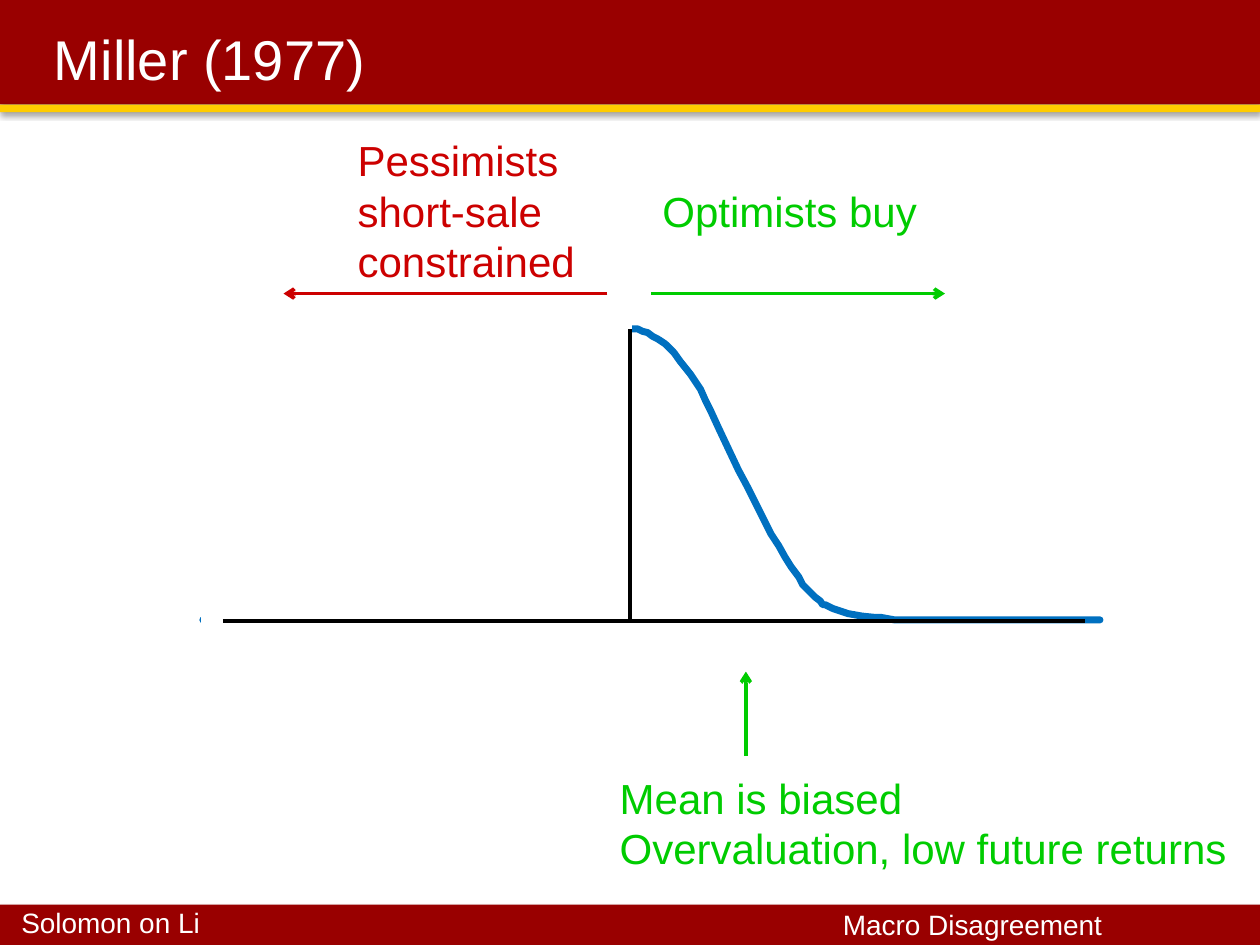
from dataclasses import dataclass

from lxml import etree
from pptx import Presentation
from pptx.dml.color import RGBColor
from pptx.enum.shapes import MSO_CONNECTOR, MSO_SHAPE
from pptx.enum.text import MSO_ANCHOR, MSO_AUTO_SIZE
from pptx.oxml.ns import qn
from pptx.util import Inches, Pt

RECTANGLE = MSO_SHAPE.RECTANGLE
STRAIGHT = MSO_CONNECTOR.STRAIGHT
TOP, MIDDLE = MSO_ANCHOR.TOP, MSO_ANCHOR.MIDDLE
FIT_SHAPE, FIXED = MSO_AUTO_SIZE.SHAPE_TO_FIT_TEXT, MSO_AUTO_SIZE.NONE
COLUMNS, ROWS = 10, 7.5


@dataclass(frozen=True)
class Theme:
    font: str = "Arial"
    title_size: int = 32
    label_size: int = 24
    footer_size: int = 16
    band: str = "990000"
    stripe: str = "FFCC00"
    white: str = "FFFFFF"
    black: str = "000000"
    curve: str = "0070C0"
    optimist: str = "00CC00"
    pessimist: str = "CC0000"
    line_width: int = 2
    curve_width: int = 4


class SlideBuilder:
    """Places elements on a grid of COLUMNS by ROWS cells."""

    def __init__(self, presentation, theme):
        self.theme = theme
        self.slide = presentation.slides.add_slide(presentation.slide_layouts[6])
        self.column = presentation.slide_width / COLUMNS
        self.row = presentation.slide_height / ROWS

    def place(self, x, y):
        return round(x * self.column), round(y * self.row)

    def style_line(self, line, color, width):
        line.color.rgb = RGBColor.from_string(color)
        line.width = Pt(width)

    def box(self, left, top, width, height, color, outline=False, shadow=None):
        shape = self.slide.shapes.add_shape(
            RECTANGLE, *self.place(left, top), *self.place(width, height))
        shape.fill.solid()
        shape.fill.fore_color.rgb = RGBColor.from_string(color)
        if outline:
            self.style_line(shape.line, color, self.theme.line_width)
        else:
            shape.line.fill.background()
        shape.shadow.inherit = False
        if shadow:
            opacity, blur, distance = shadow
            effects = shape._element.spPr.find(qn("a:effectLst"))
            outer = etree.SubElement(
                effects, qn("a:outerShdw"), blurRad=str(Pt(blur)),
                dist=str(Pt(distance)), dir="5400000", rotWithShape="0")
            tint = etree.SubElement(outer, qn("a:srgbClr"), val=self.theme.black)
            etree.SubElement(tint, qn("a:alpha"), val=str(opacity * 1000))

    def text(self, left, top, width, height, paragraphs, color, size,
             inset=True, wrap=False, anchor=TOP, fit=FIT_SHAPE):
        """Each paragraph is a list of lines, one run per line."""
        shape = self.slide.shapes.add_textbox(
            *self.place(left, top), *self.place(width, height))
        frame = shape.text_frame
        frame.word_wrap = wrap
        frame.auto_size = fit
        frame.vertical_anchor = anchor
        if not inset:
            frame.margin_left = frame.margin_right = 0
            frame.margin_top = frame.margin_bottom = 0
        for index, lines in enumerate(paragraphs):
            paragraph = frame.add_paragraph() if index else frame.paragraphs[0]
            for number, line in enumerate(lines):
                if number:
                    paragraph.add_line_break()
                run = paragraph.add_run()
                run.text = line
                run.font.name = self.theme.font
                run.font.size = Pt(size)
                run.font.color.rgb = RGBColor.from_string(color)

    def line(self, start, end, color, arrow=False):
        connector = self.slide.shapes.add_connector(
            STRAIGHT, *self.place(*start), *self.place(*end))
        self.style_line(connector.line, color, self.theme.line_width)
        if arrow:
            etree.SubElement(connector.line._get_or_add_ln(), qn("a:tailEnd"), type="arrow")
        etree.SubElement(connector._element.spPr, qn("a:effectLst"))

    def curve(self, points, color, width):
        corners = [self.place(*point) for point in points]
        builder = self.slide.shapes.build_freeform(*corners[0], scale=1.0)
        builder.add_line_segments(corners[1:], close=False)
        shape = builder.convert_to_shape()
        shape.fill.background()
        self.style_line(shape.line, color, width)
        outline = shape.line._get_or_add_ln()
        outline.set("cap", "rnd")
        etree.SubElement(outline, qn("a:round"))
        shape.shadow.inherit = False


# Distribution of beliefs: the half right of the mean, mirrored for the left
MEAN, PEAK, BASE = 5, 2.61, 4.92
LEFT_END, RIGHT_END = 1.61, 8.73
FALLING_HALF = [
    (5.02, 2.61), (5.06, 2.61), (5.1, 2.63), (5.14, 2.64), (5.18, 2.67),
    (5.22, 2.69), (5.28, 2.73), (5.31, 2.76), (5.35, 2.8), (5.4, 2.87),
    (5.44, 2.92), (5.48, 2.97), (5.52, 3.03), (5.56, 3.09), (5.6, 3.18),
    (5.64, 3.26), (5.7, 3.39), (5.78, 3.56), (5.86, 3.73), (5.93, 3.86),
    (5.99, 3.98), (6.06, 4.12), (6.12, 4.24), (6.18, 4.33), (6.23, 4.42),
    (6.28, 4.5), (6.34, 4.58), (6.37, 4.64), (6.43, 4.7), (6.47, 4.74),
    (6.51, 4.77), (6.53, 4.8), (6.55, 4.8), (6.61, 4.83), (6.73, 4.87),
    (6.84, 4.89), (6.94, 4.9), (6.99, 4.9), (7.1, 4.92),
]
RISING_HALF = [(2 * MEAN - x, y) for x, y in reversed(FALLING_HALF)]
BELL = [(LEFT_END, BASE), *RISING_HALF, *FALLING_HALF, (RIGHT_END, BASE)]


def main():
    presentation = Presentation()
    presentation.slide_width, presentation.slide_height = Inches(10), Inches(7.5)
    theme = Theme()
    builder = SlideBuilder(presentation, theme)

    # Header and footer bands
    band_shadow = (35, 3.1, 1.8)
    builder.box(0, 7.18, COLUMNS, 0.32, theme.band, shadow=band_shadow)
    builder.box(0, 0, COLUMNS, 0.83, theme.band, shadow=band_shadow)
    builder.box(0, 0.83, COLUMNS, 0.06, theme.stripe, shadow=(38, 3.1, 1.6))
    for left, top, words in ((0.17, 7.19, "Solomon on Li"),
                             (6.69, 7.2, "Macro Disagreement")):
        builder.text(left, top, 3.27, 0.27, [[words]], theme.white,
                     theme.footer_size, inset=False, wrap=True)
    builder.text(0.33, 0.17, 9, 0.58, [["Miller (1977)"]], theme.white,
                 theme.title_size, wrap=True, anchor=MIDDLE, fit=FIXED)

    # Bell curve, with the pessimists' half covered
    builder.curve(BELL, theme.curve, theme.curve_width)
    builder.box(LEFT_END, 2.5, MEAN - LEFT_END, 2.5, theme.white, outline=True)
    builder.line((MEAN, PEAK), (MEAN, BASE), theme.black)
    builder.line((1.77, 4.93), (8.61, 4.93), theme.black)

    # Arrows
    for start, end, color in (((5.17, 2.33), (7.5, 2.33), theme.optimist),
                              ((4.82, 2.33), (2.25, 2.33), theme.pessimist),
                              ((5.92, 6), (5.92, 5.33), theme.optimist)):
        builder.line(start, end, color, arrow=True)

    # Labels
    builder.text(2.74, 1.02, 1.94, 1.31,
                 [["Pessimists"], ["short-sale ", "constrained"]],
                 theme.pessimist, theme.label_size)
    builder.text(5.16, 1.42, 2.24, 0.5, [["Optimists buy"]],
                 theme.optimist, theme.label_size)
    builder.text(4.82, 6.08, 5.07, 0.91,
                 [["Mean is biased"], ["Overvaluation, low future returns"]],
                 theme.optimist, theme.label_size)

    presentation.save("out.pptx")


if __name__ == "__main__":
    main()
